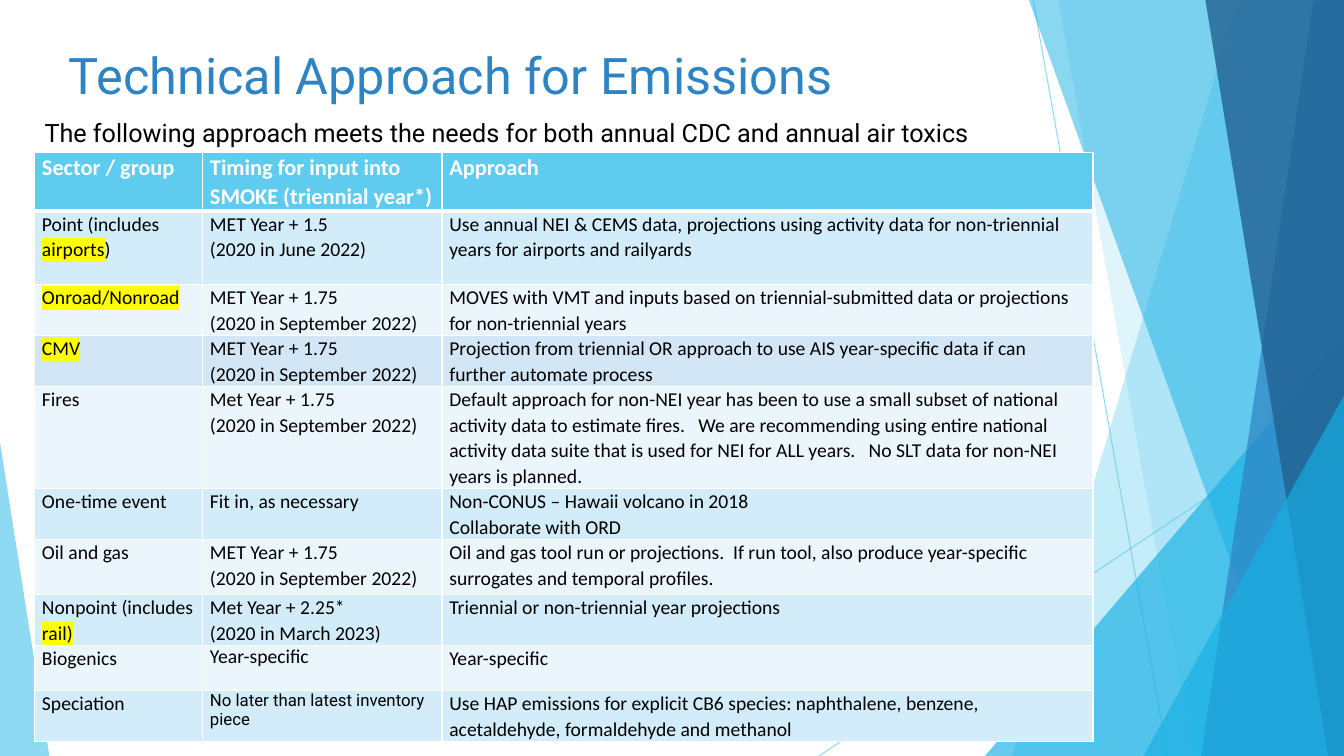
from lxml import etree
from pptx import Presentation
from pptx.dml.color import RGBColor
from pptx.enum.shapes import MSO_CONNECTOR, MSO_SHAPE
from pptx.enum.text import MSO_ANCHOR, MSO_AUTO_SIZE, PP_ALIGN
from pptx.oxml.ns import qn
from pptx.util import Pt

PX = 9525
W, H = 1280, 720
TITLE_ONLY = 5
STRAIGHT = MSO_CONNECTOR.STRAIGHT
TRIANGLE = MSO_SHAPE.ISOSCELES_TRIANGLE
TOP, LEFT, NO_FIT = MSO_ANCHOR.TOP, PP_ALIGN.LEFT, MSO_AUTO_SIZE.NONE

WHITE = RGBColor(0xFF, 0xFF, 0xFF)
BLACK = RGBColor(0, 0, 0)
YELLOW = RGBColor(0xFF, 0xFF, 0)
SKY = RGBColor(0x5F, 0xCB, 0xEF)
CYAN = RGBColor(0x17, 0xB0, 0xE4)
BLUE = RGBColor(0x2E, 0x83, 0xC3)
NAVY = RGBColor(0x22, 0x62, 0x92)
BAND_DARK = RGBColor(0xD2, 0xEC, 0xF9)
BAND_LIGHT = RGBColor(0xEA, 0xF6, 0xFC)
BAND_CMV = RGBColor(0xD3, 0xE6, 0xF5)

COLS = [160, 228, 620]
ROW_HEIGHTS = [54, 70, 48, 48, 90, 43, 52, 43, 43, 43]
ROWS = [
    ("Sector / group", "Timing for input into SMOKE (triennial year*)", "Approach"),
    ("Point (includes |airports|)", "MET Year + 1.5\n(2020 in June 2022)",
     "Use annual NEI & CEMS data, projections using activity data for non-triennial "
     "years for airports and railyards"),
    ("|Onroad/Nonroad|", "MET Year + 1.75\n(2020 in September 2022)",
     "MOVES with VMT and inputs based on triennial-submitted data or projections "
     "for non-triennial years"),
    ("|CMV|", "MET Year + 1.75\n(2020 in September 2022)",
     "Projection from triennial OR approach to use AIS year-specific data if can "
     "further automate process"),
    ("Fires", "Met Year + 1.75\n(2020 in September 2022)",
     "Default approach for non-NEI year has been to use a small subset of national "
     "activity data to estimate fires.   We are recommending using entire national "
     "activity data suite that is used for NEI for ALL years.   No SLT data for non-NEI "
     "years is planned."),
    ("One-time event", "Fit in, as necessary",
     "Non-CONUS – Hawaii volcano in 2018\nCollaborate with ORD"),
    ("Oil and gas", "MET Year + 1.75\n(2020 in September 2022)",
     "Oil and gas tool run or projections.  If run tool, also produce year-specific "
     "surrogates and temporal profiles."),
    ("Nonpoint (includes |rail)|", "Met Year + 2.25*\n(2020 in March 2023)",
     "Triennial or non-triennial year projections"),
    ("Biogenics", "Year-specific", "Year-specific"),
    ("Speciation", "No later than latest inventory piece",
     "Use HAP emissions for explicit CB6 species: naphthalene, benzene, "
     "acetaldehyde, formaldehyde and methanol"),
]
ROW_FILLS = {0: SKY, ROWS.index(next(r for r in ROWS if r[0] == "|CMV|")): BAND_CMV}
CELL_FORMATS = {
    (8, 1): {"spacing": 1.0},
    (9, 1): {"spacing": 1.0, "size": 12, "font": "Roboto"},
}


def px(*lengths):
    """Turn pixel lengths into EMU."""
    return [n * PX for n in lengths]


def add_text(tf, text, size=14, font="Calibri", color=BLACK, bold=False, spacing=None):
    """Write text, one paragraph a line, highlighting what stands between bars."""
    tf.word_wrap = True
    for i, line in enumerate(text.split("\n")):
        p = tf.add_paragraph() if i else tf.paragraphs[0]
        p.alignment = LEFT
        if spacing:
            p.line_spacing = spacing
        for j, part in enumerate(line.split("|")):
            if not part:
                continue
            r = p.add_run()
            r.text = part
            r.font.size, r.font.name, r.font.bold = Pt(size), font, bold
            r.font.color.rgb = color
            if j % 2:
                highlight = etree.Element(qn("a:highlight"))
                etree.SubElement(highlight, qn("a:srgbClr"), val=str(YELLOW))
                r._r.rPr.find(qn("a:solidFill")).addnext(highlight)


def set_alpha(shape, percent):
    """Make the colours of a shape partly transparent."""
    for color in list(shape._element.spPr.iter(qn("a:srgbClr"))):
        etree.SubElement(color, qn("a:alpha"), val=str(percent * 1000))


def paint(shape, color, alpha):
    """Give a shape a transparent fill, no line and no shadow."""
    shape.shadow.inherit = False
    shape.fill.solid()
    shape.fill.fore_color.rgb = color
    shape.line.fill.background()
    set_alpha(shape, alpha)


def add_line(s, *ends):
    """Draw one thin line of the backdrop."""
    line = s.shapes.add_connector(STRAIGHT, *px(*ends))
    line.line.color.rgb = SKY
    line.line.width = Pt(0.75)
    set_alpha(line, 70)
    etree.SubElement(line._element.spPr, qn("a:effectLst"))


def add_facet(s, top_x, bottom_x, color, alpha):
    """Draw a full-height facet from a slanted left edge to the right of the slide."""
    builder = s.shapes.build_freeform(top_x, 0, scale=PX)
    builder.add_line_segments([(W, 0), (W, H), (bottom_x, H)], close=True)
    paint(builder.convert_to_shape(), color, alpha)


def add_corner(s, x, y, w, h, apex, color, alpha):
    """Draw a right triangle with its apex over the left (0) or right (1) end."""
    corner = s.shapes.add_shape(TRIANGLE, *px(x, y, w, h))
    corner.adjustments[0] = apex
    paint(corner, color, alpha)


def add_backdrop(s):
    """Draw the overlapping blue facets at the sides of the slide."""
    add_line(s, 984, 0, 1112, H)
    add_line(s, W, 387, 780, H)
    add_facet(s, 1179, 964, SKY, 36)
    add_facet(s, 1008, 1136, SKY, 20)
    add_corner(s, 938, 320, 342, 400, 1, CYAN, 66)
    add_facet(s, 980, 1239, CYAN, 50)
    add_facet(s, 1251, 1144, BLUE, 70)
    add_facet(s, 1148, 1265, NAVY, 80)
    add_corner(s, 1089, 377, 191, 343, 1, CYAN, 66)
    add_corner(s, 0, 421, 47, 299, 0, SKY, 70)


def add_title(s, x, y, w, h):
    """Move the title placeholder into its box and fill it."""
    title = s.shapes.title
    title.left, title.top, title.width, title.height = px(x, y, w, h)
    tf = title.text_frame
    tf.vertical_anchor, tf.auto_size = TOP, NO_FIT
    add_text(tf, "Technical Approach for Emissions", size=36, font="Roboto", color=BLUE)


def add_lead(s, x, y, w, h):
    """Write the sentence above the table."""
    tf = s.shapes.add_textbox(*px(x, y, w, h)).text_frame
    add_text(tf, "The following approach meets the needs for both annual CDC and annual air toxics",
             size=18, font="Roboto")


def set_borders(cell, bottom):
    """Draw white borders around a cell."""
    tcPr = cell._tc.get_or_add_tcPr()
    for side, width in zip("LRTB", (1, 1, 1, bottom)):
        ln = etree.SubElement(tcPr, qn(f"a:ln{side}"), w=str(Pt(width)))
        fill = etree.SubElement(ln, qn("a:solidFill"))
        etree.SubElement(fill, qn("a:srgbClr"), val=str(WHITE))


def add_sector_table(s, x, y):
    """Build the table of sectors, timing and approach."""
    table = s.shapes.add_table(len(ROWS), len(COLS),
                               *px(x, y, sum(COLS), sum(ROW_HEIGHTS))).table
    for col, width in zip(table.columns, COLS):
        col.width = width * PX
    for i, (texts, height) in enumerate(zip(ROWS, ROW_HEIGHTS)):
        table.rows[i].height = height * PX
        header = i == 0
        for j, text in enumerate(texts):
            cell = table.cell(i, j)
            cell.margin_left, cell.margin_right, cell.margin_top, cell.margin_bottom = px(7, 7, 0, 0)
            set_borders(cell, 3 if header else 1)
            cell.fill.solid()
            cell.fill.fore_color.rgb = ROW_FILLS.get(i, BAND_DARK if i % 2 else BAND_LIGHT)
            style = {"size": 16 if header else 14, "color": WHITE if header else BLACK,
                     "bold": header, "spacing": 1.07}
            add_text(cell.text_frame, text, **{**style, **CELL_FORMATS.get((i, j), {})})


def main():
    """Build the slide and save it."""
    prs = Presentation()
    prs.slide_width, prs.slide_height = px(W, H)
    s = prs.slides.add_slide(prs.slide_layouts[TITLE_ONLY])
    add_backdrop(s)
    add_title(s, 56, 37, 902, 138)
    add_sector_table(s, 33, 145)
    add_lead(s, 33, 107, 944, 38)
    prs.save("out.pptx")


if __name__ == "__main__":
    main()
